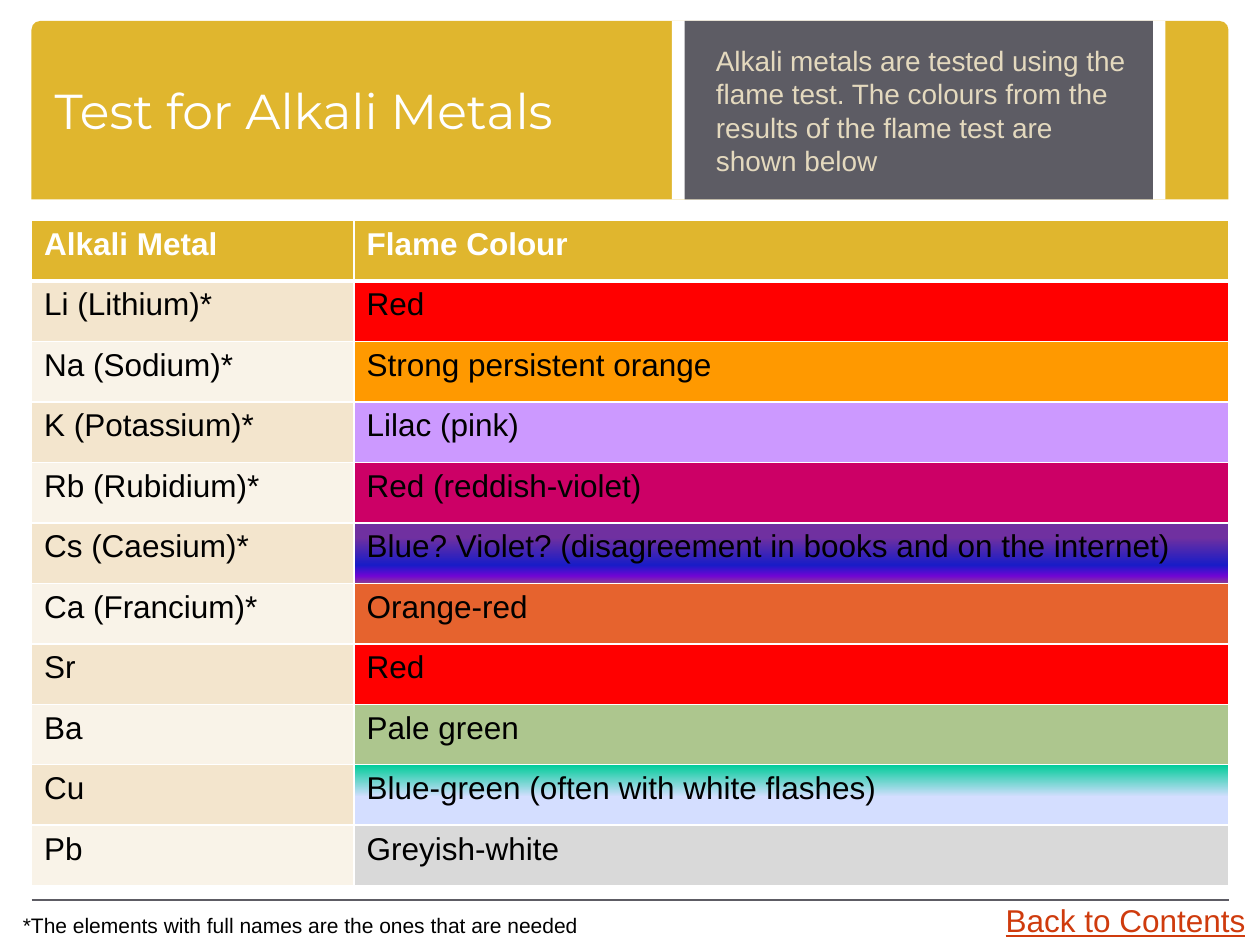
from lxml.etree import SubElement
from pptx import Presentation
from pptx.dml.color import RGBColor
from pptx.enum.shapes import MSO_CONNECTOR, MSO_SHAPE
from pptx.enum.text import MSO_ANCHOR, PP_ALIGN
from pptx.oxml.ns import qn
from pptx.util import Inches, Pt

COLS, ROWS = 120, 90
GOLD, SLATE, WHITE, BLACK = "E0B62E", "5D5C64", "FFFFFF", "000000"
BANDS = ("F3E5CD", "F9F3E8")

CAESIUM = [(0, "7030A0"), (24, "7030A0"), (70, "181CC7"), (88, "7005D4"), (100, "8C3D91")]
COPPER = [(0, "00CC99"), (53, "D4DEFF"), (83, "D4DEFF"), (100, "D4DEFF"), (100, "96AB94")]
FLAMES = [
    ("Li (Lithium)*", "Red", "FF0000"),
    ("Na (Sodium)*", "Strong persistent orange", "FF9900"),
    ("K (Potassium)*", "Lilac (pink)", "CC99FF"),
    ("Rb (Rubidium)*", "Red (reddish-violet)", "CC0066"),
    ("Cs (Caesium)*", "Blue? Violet? (disagreement in books and on the internet)", CAESIUM),
    ("Ca (Francium)*", "Orange-red", "E6632E"),
    ("Sr", "Red", "FF0000"),
    ("Ba", "Pale green", "ADC68E"),
    ("Cu", "Blue-green (often with white flashes)", COPPER),
    ("Pb", "Greyish-white", "D9D9D9"),
]


def rgb(value):
    return RGBColor.from_string(value)


def write(tf, text, size=18, color=BLACK, font="Arial", bold=False,
          underline=False, anchor=MSO_ANCHOR.TOP, wrap=True):
    tf.word_wrap = wrap
    tf.vertical_anchor = anchor
    p = tf.paragraphs[0]
    p.alignment = PP_ALIGN.LEFT
    r = p.add_run()
    r.text = text
    r.font.size = Pt(size)
    r.font.name = font
    r.font.bold = bold
    r.font.underline = underline
    r.font.color.rgb = rgb(color)


def add_color(parent, value):
    SubElement(parent, qn("a:srgbClr"), val=value)


class Slide:
    def __init__(self, prs):
        self.col = prs.slide_width / COLS
        self.row = prs.slide_height / ROWS
        self.s = prs.slides.add_slide(prs.slide_layouts[5])

    def box(self, x, y, w, h):
        return (int(x * self.col), int(y * self.row),
                int(w * self.col), int(h * self.row))

    def panel(self, at, color, kind=MSO_SHAPE.RECTANGLE):
        sp = self.s.shapes.add_shape(kind, *self.box(*at))
        sp.shadow.inherit = False
        sp.fill.solid()
        sp.fill.fore_color.rgb = rgb(color)
        sp.line.fill.background()
        return sp

    def rule(self, x, y, w, color):
        left, top, width, _ = self.box(x, y, w, 0)
        line = self.s.shapes.add_connector(
            MSO_CONNECTOR.STRAIGHT, left, top, left + width, top)
        line.line.color.rgb = rgb(color)
        line.line.width = Pt(1)
        SubElement(line._element.spPr, qn("a:effectLst"))

    def title(self, at, text, **style):
        sp = self.s.shapes.title
        sp.left, sp.top, sp.width, sp.height = self.box(*at)
        write(sp.text_frame, text, **style)
        self.s.shapes._spTree.append(sp._element)

    def text(self, at, text, **style):
        sp = self.s.shapes.add_textbox(*self.box(*at))
        write(sp.text_frame, text, **style)

    def cell(self, cell, text, fill, top=1, bottom=1, **style):
        tcPr = cell._tc.get_or_add_tcPr()
        for side, width in (("L", 1), ("R", 1), ("T", top), ("B", bottom)):
            ln = SubElement(tcPr, qn(f"a:ln{side}"), w=str(Pt(width)))
            add_color(SubElement(ln, qn("a:solidFill")), WHITE)
        if isinstance(fill, str):
            cell.fill.solid()
            cell.fill.fore_color.rgb = rgb(fill)
        else:
            grad = SubElement(tcPr, qn("a:gradFill"), rotWithShape="1")
            stops = SubElement(grad, qn("a:gsLst"))
            for pos, color in fill:
                add_color(SubElement(stops, qn("a:gs"), pos=str(pos * 1000)), color)
            SubElement(grad, qn("a:lin"), ang="5400000", scaled="0")
        write(cell.text_frame, text, **style)

    def table(self, at, widths, header, rows):
        tbl = self.s.shapes.add_table(len(rows) + 1, len(header), *self.box(*at)).table
        tbl.horz_banding = False
        for column, width in zip(tbl.columns, widths):
            column.width = int(width * self.col)
        for c, text in enumerate(header):
            self.cell(tbl.cell(0, c), text, GOLD, bottom=3, color=WHITE, bold=True)
        for n, (metal, flame, fill) in enumerate(rows):
            top = 1 if n else 3
            self.cell(tbl.cell(n + 1, 0), metal, BANDS[n % 2], top=top)
            self.cell(tbl.cell(n + 1, 1), flame, fill, top=top)


def main():
    prs = Presentation()
    prs.slide_width, prs.slide_height = Inches(10), Inches(7.5)
    s = Slide(prs)
    band = s.panel((3, 2, 114, 17), GOLD, MSO_SHAPE.ROUND_2_SAME_RECTANGLE)
    band.adjustments[0] = 0.05
    s.rule(3, 85.7, 114, SLATE)
    s.panel((64, 2, 47, 17), WHITE)
    s.panel((65.2, 2, 44.6, 17), SLATE)
    s.title((4, 3, 59, 15), "Test for Alkali Metals", size=28, color=WHITE,
            font="Montserrat", anchor=MSO_ANCHOR.MIDDLE)
    s.text((67, 3, 42, 15),
           "Alkali metals are tested using the flame test. The colours from the "
           "results of the flame test are shown below",
           size=16, color="E4D9BE", anchor=MSO_ANCHOR.MIDDLE)
    s.text((94.6, 85.2, 25.4, 4.8), "Back to Contents", color="CF3B0D",
           underline=True, wrap=False)
    s.table((3, 21, 114, 63.36), (30.72, 83.28), ("Alkali Metal", "Flame Colour"), FLAMES)
    s.text((1, 86.3, 55.7, 3.6),
           "*The elements with full names are the ones that are needed",
           size=12, wrap=False)
    prs.save("out.pptx")


if __name__ == "__main__":
    main()
